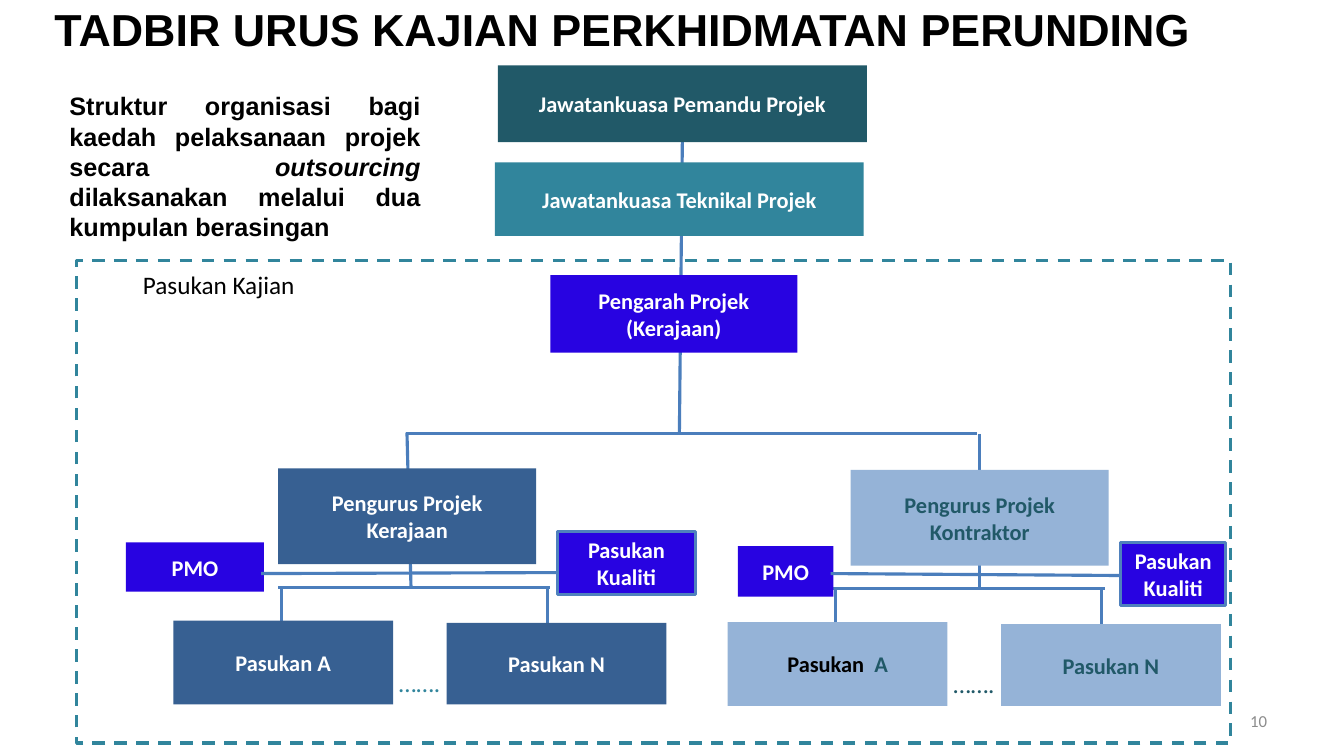
"""Build the project governance chart slide."""
from lxml import etree
from pptx import Presentation
from pptx.dml.color import RGBColor
from pptx.enum.dml import MSO_LINE
from pptx.enum.shapes import MSO_CONNECTOR, MSO_SHAPE
from pptx.enum.text import MSO_ANCHOR, MSO_AUTO_SIZE, PP_ALIGN
from pptx.oxml.ns import qn
from pptx.util import Pt

RECT, STRAIGHT, DASH = MSO_SHAPE.RECTANGLE, MSO_CONNECTOR.STRAIGHT, MSO_LINE.DASH
TOP, MIDDLE = MSO_ANCHOR.TOP, MSO_ANCHOR.MIDDLE
LEFT, CENTER, RIGHT, JUSTIFY = PP_ALIGN.LEFT, PP_ALIGN.CENTER, PP_ALIGN.RIGHT, PP_ALIGN.JUSTIFY
FIXED = MSO_AUTO_SIZE.NONE
BLACK, WHITE, GREY = "000000", "FFFFFF", "8C8C8C"
DEEP, TEAL, NAVY = "215968", "31859C", "376092"
PALE, BLUE, WIRE, EDGE = "95B3D7", "2803E1", "4B7EBC", "4F81BD"


def paint(part, code):
    """Give a fill or font a hex colour."""
    if hasattr(part, "solid"):
        part.solid()
        part.fore_color.rgb = RGBColor.from_string(code)
    else:
        part.color.rgb = RGBColor.from_string(code)


def style(par, size, ink, face="Calibri", bold=False, align=LEFT):
    """Format a whole paragraph."""
    par.alignment = align
    par.font.size, par.font.name, par.font.bold = Pt(size), face, bold
    paint(par.font, ink)


def block(slide, box, fill, text="", ink=WHITE, edge=None, width=2):
    """Draw a rectangle with centred bold lines of text."""
    shape = slide.shapes.add_shape(RECT, *map(Pt, box))
    shape.shadow.inherit = False
    paint(shape.fill, fill)
    if edge:
        paint(shape.line, edge)
        shape.line.width = Pt(width)
    else:
        shape.line.fill.background()
    if text:
        shape.text_frame.text = text
        for par in shape.text_frame.paragraphs:
            style(par, 16, ink, bold=True, align=CENTER)
    return shape


def label(slide, box, text, size, ink, wrap=False, anchor=TOP, **look):
    """Place a text box and return its paragraph."""
    frame = slide.shapes.add_textbox(*map(Pt, box)).text_frame
    frame.word_wrap, frame.vertical_anchor = wrap, anchor
    par = frame.paragraphs[0]
    par.text = text
    style(par, size, ink, **look)
    return par


def wire(slide, *ends):
    """Draw a plain line from x, y to x, y."""
    line = slide.shapes.add_connector(STRAIGHT, *map(Pt, ends))
    paint(line.line, WIRE)
    line.line.width = Pt(2.25)
    etree.SubElement(line._element.spPr, qn("a:effectLst"))


def title(slide, box, text):
    """Move and format the title."""
    shape = slide.shapes.title
    shape.left, shape.top, shape.width, shape.height = map(Pt, box)
    frame = shape.text_frame
    frame.text = text
    frame.word_wrap, frame.auto_size, frame.vertical_anchor = True, FIXED, TOP
    par = frame.paragraphs[0]
    style(par, 32, BLACK, "Arial", True, JUSTIFY)
    par.line_spacing = Pt(12)


def note(slide, box):
    """Write the statement beside the committees."""
    par = label(slide, box, "Struktur organisasi bagi kaedah pelaksanaan projek secara ",
                18, BLACK, wrap=True, face="Arial", bold=True, align=JUSTIFY)
    term = par.add_run()
    term.text, term.font.italic = "outsourcing ", True
    par.add_run().text = "dilaksanakan melalui dua kumpulan berasingan"


def team(slide, box):
    """Draw the dashed frame of the study team."""
    x, y = box[:2]
    block(slide, box, WHITE, edge=TEAL, width=2.25).line.dash_style = DASH
    label(slide, (x + 40.3, y + 2.8, 123.8, 29), "Pasukan Kajian", 18, BLACK)


def head(slide, x, y):
    """Draw the committees and director above the two branches."""
    wire(slide, x + 133.7, y + 54.7, x + 131.6, y + 261.8)
    wire(slide, x - 63.5, y + 262.8, x + 344, y + 262.8)
    block(slide, (x + 2, y, 263.5, 54.7), DEEP, "Jawatankuasa Pemandu Projek")
    block(slide, (x - 0.2, y + 69.2, 263.5, 52.5), TEAL, "Jawatankuasa Teknikal Projek")
    block(slide, (x + 39.4, y + 149.8, 176.4, 55.4), BLUE, "Pengarah Projek\n(Kerajaan)")


def branch(slide, x, y, fill, ink, dots, lead, lean, name, office, check, link):
    """Draw one manager with the office, quality unit and teams."""
    stem = x + lead + 92
    wire(slide, stem, y - 25, stem + lean, y + 86)
    wire(slide, x + 108.7, y + 85.6, x + 303.1, y + 85.6)
    for drop in (110.9, 301):
        wire(slide, x + drop, y + 85.6, x + drop, y + 112)
    block(slide, (x + lead, y + 0.6, 184.3, 68.4), fill, "Pengurus Projek\n" + name, ink)
    first = block(slide, (x + 33.8, y + 109.4, 157, 59.8), fill, "Pasukan ", ink)
    run = first.text_frame.paragraphs[0].add_run()
    run.text = " A" if ink == DEEP else "A"
    if ink == DEEP:
        paint(first.text_frame.paragraphs[0].runs[0].font, BLACK)
    block(slide, (x + 229, y + 110.9, 157, 58.3), fill, "Pasukan N", ink)
    label(slide, (x + 187.9, y + 139, 43.9, 28.8), "…….", 18, dots)
    left, top, width, tall = office
    block(slide, (x + left, y + top, width, tall), BLUE, "PMO")
    wire(slide, x + left + width - 2, y + link[0], x + check[0], y + link[1])
    block(slide, (x + check[0], y + check[1], check[2], 45.4), BLUE,
          "Pasukan\nKualiti", edge=EDGE)


def main():
    """Assemble and save the slide."""
    deck = Presentation()
    deck.slide_width, deck.slide_height = Pt(960), Pt(540)
    slide = deck.slides.add_slide(deck.slide_layouts[5])
    title(slide, (31.7, 23.8, 928, 19.4), "TADBIR URUS KAJIAN PERKHIDMATAN PERUNDING")
    note(slide, (42.5, 61.2, 265, 116.6))
    team(slide, (54.7, 185.8, 824.4, 344.9))
    head(slide, 353.7, 46.8)
    branch(slide, 90, 334, NAVY, WHITE, TEAL, 108.7, 2.9, "Kerajaan",
           (0, 53.4, 98.6, 35.3), (308.2, 45.4, 98.6), (75.7, 75))
    branch(slide, 486, 335, PALE, DEEP, DEEP, 121.7, 0, "Kontraktor",
           (41, 55.2, 68.4, 36), (314.6, 52.4, 74.9), (74.7, 76.1))
    label(slide, (688.3, 500.4, 223.9, 28.8), "10", 12, GREY,
          wrap=True, anchor=MIDDLE, align=RIGHT)
    deck.save("out.pptx")


if __name__ == "__main__":
    main()
